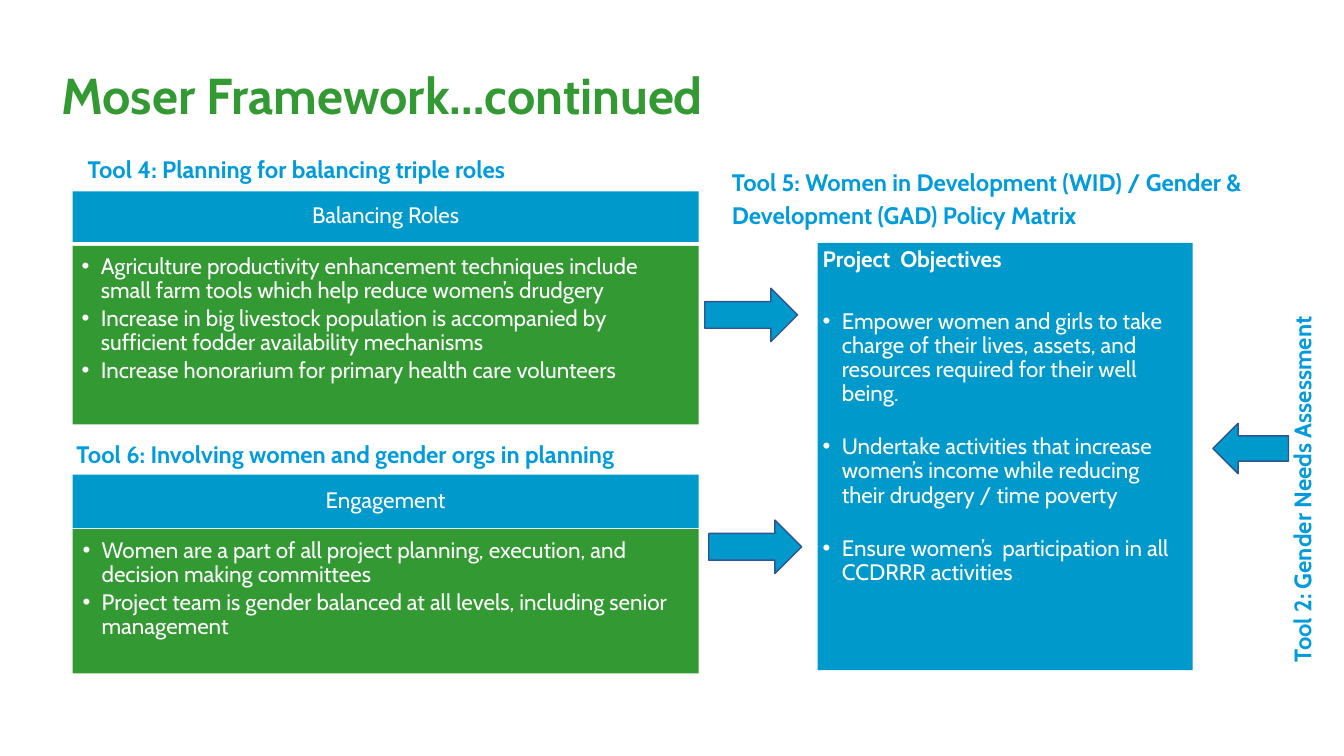
"""Build the Moser Framework slide on tools 2, 4, 5 and 6."""
from lxml.etree import SubElement
from pptx import Presentation
from pptx.dml.color import RGBColor
from pptx.enum.shapes import MSO_SHAPE
from pptx.enum.text import MSO_ANCHOR, PP_ALIGN
from pptx.oxml.ns import qn
from pptx.util import Inches, Pt

GREEN, BLUE, HEADING_BLUE, WHITE, NAVY = "339933", "0099CC", "009BDD", "FFFFFF", "31538F"


def color(value):
    return RGBColor.from_string(value)


def write(shape, lines, size, ink, insets, bold=False, spacing=0.9, bullets=False,
          anchor=MSO_ANCHOR.TOP, align=PP_ALIGN.LEFT):
    """Write (text, space before) pairs into the shape."""
    frame = shape.text_frame
    frame.word_wrap = True
    frame.vertical_anchor = anchor
    frame.margin_left, frame.margin_top, frame.margin_right, frame.margin_bottom = map(Inches, insets)
    for text, before in lines:
        paragraph = frame.paragraphs[0] if not frame.text else frame.add_paragraph()
        paragraph.text = text
        paragraph.alignment = align
        paragraph.line_spacing = spacing
        if before:
            paragraph.space_before = Pt(before)
        if bullets and text != "Project  Objectives":
            properties = paragraph._p.get_or_add_pPr()
            properties.set("marL", str(Inches(0.19)))
            properties.set("indent", str(-Inches(0.19)))
            bullet_color = SubElement(properties, qn("a:buClr"))
            SubElement(bullet_color, qn("a:srgbClr")).set("val", WHITE)
            SubElement(properties, qn("a:buFont")).set("typeface", "Arial")
            SubElement(properties, qn("a:buChar")).set("char", "•")
        paragraph.font.name = "Cabin"
        paragraph.font.size = Pt(size)
        paragraph.font.bold = bold or text == "Project  Objectives"
        paragraph.font.color.rgb = color(ink)


prs = Presentation()
prs.slide_width, prs.slide_height = Inches(13.33), Inches(7.5)
slide = prs.slides.add_slide(prs.slide_layouts[6])
TEXT_INSETS = (0.1, 0.05, 0.1, 0.05)

title = slide.shapes.add_textbox(Inches(0.51), Inches(0.65), Inches(8.15), Inches(0.65))
write(title, [("Moser Framework…continued", 0)], 36, GREEN, TEXT_INSETS, bold=True,
      anchor=MSO_ANCHOR.MIDDLE)

tool_headings = [
    ("Tool 5: Women in Development (WID) / Gender & Development (GAD) Policy Matrix",
     7.16, 1.58, 5.93, 0.7, 1.14, 0),
    ("Tool 4: Planning for balancing triple roles", 0.77, 1.45, 6.35, 0.47, 1.14, 0),
    ("Tool 6: Involving women and gender orgs in planning", 0.66, 4.41, 7.36, 0.2, 0.6, 0),
    ("Tool 2: Gender Needs Assessment", 10.61, 3.91, 4.97, 0.55, 0.6, 270),
]
for text, left, top, width, height, spacing, rotation in tool_headings:
    heading = slide.shapes.add_textbox(Inches(left), Inches(top), Inches(width), Inches(height))
    heading.rotation = rotation
    write(heading, [(text, 0)], 17, HEADING_BLUE, TEXT_INSETS, bold=True, spacing=spacing)

balancing_roles = [
    ("Agriculture productivity enhancement techniques include small farm tools "
     "which help reduce women’s drudgery", 0),
    ("Increase in big livestock population is accompanied by sufficient fodder "
     "availability mechanisms", 2.7),
    ("Increase honorarium for primary health care volunteers", 2.7),
]
engagement = [
    ("Women are a part of all project planning, execution, and decision making committees", 0),
    ("Project team is gender balanced at all levels, including senior management", 2.7),
]
objectives = [
    ("Project  Objectives", 0),
    ("Empower women and girls to take charge of their lives, assets, and resources "
     "required for their well being.", 27),
    ("Undertake activities that increase women’s income while reducing their "
     "drudgery / time poverty", 20.7),
    ("Ensure women’s  participation in all CCDRRR activities", 20.7),
]
panels = [
    ([("Balancing Roles", 0)], 0.72, 1.9, 6.21, 0.5, BLUE, (0.12, 0.07, 0.12, 0.07), False),
    (balancing_roles, 0.72, 2.44, 6.21, 1.77, GREEN, (0.09, 0.09, 0.12, 0.14), True),
    ([("Engagement", 0)], 0.72, 4.71, 6.21, 0.53, BLUE, (0.14, 0.08, 0.14, 0.08), False),
    (engagement, 0.72, 5.25, 6.21, 1.43, GREEN, (0.1, 0.1, 0.14, 0.16), True),
    (objectives, 8.11, 2.41, 3.72, 4.24, BLUE, (0.05, 0.05, 0.05, 0.05), True),
]
for lines, left, top, width, height, fill, insets, bulleted in panels:
    panel = slide.shapes.add_shape(MSO_SHAPE.RECTANGLE, Inches(left), Inches(top),
                                   Inches(width), Inches(height))
    panel.shadow.inherit = False
    panel.fill.solid()
    panel.fill.fore_color.rgb = color(fill)
    panel.line.fill.background()
    write(panel, lines, 16, WHITE, insets, bullets=bulleted,
          anchor=MSO_ANCHOR.TOP if bulleted else MSO_ANCHOR.MIDDLE,
          align=PP_ALIGN.LEFT if bulleted else PP_ALIGN.CENTER)

arrows = [
    (MSO_SHAPE.RIGHT_ARROW, 6.99, 2.86, 0.92, 0.53),
    (MSO_SHAPE.RIGHT_ARROW, 7.03, 5.16, 0.92, 0.53),
    (MSO_SHAPE.LEFT_ARROW, 12.03, 4.2, 0.75, 0.5),
]
for direction, left, top, width, height in arrows:
    arrow = slide.shapes.add_shape(direction, Inches(left), Inches(top),
                                   Inches(width), Inches(height))
    arrow.shadow.inherit = False
    arrow.fill.solid()
    arrow.fill.fore_color.rgb = color(BLUE)
    arrow.line.color.rgb = color(NAVY)
    arrow.line.width = Pt(1)

prs.save("out.pptx")
